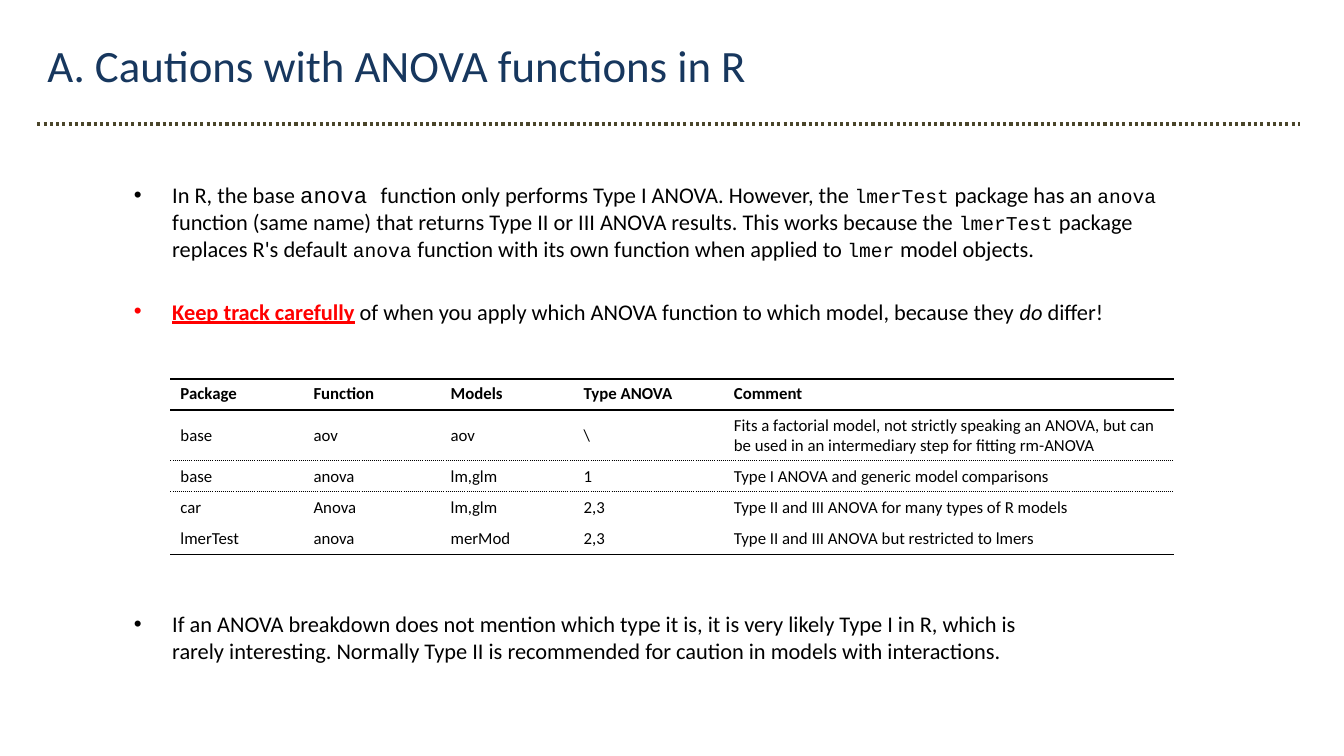
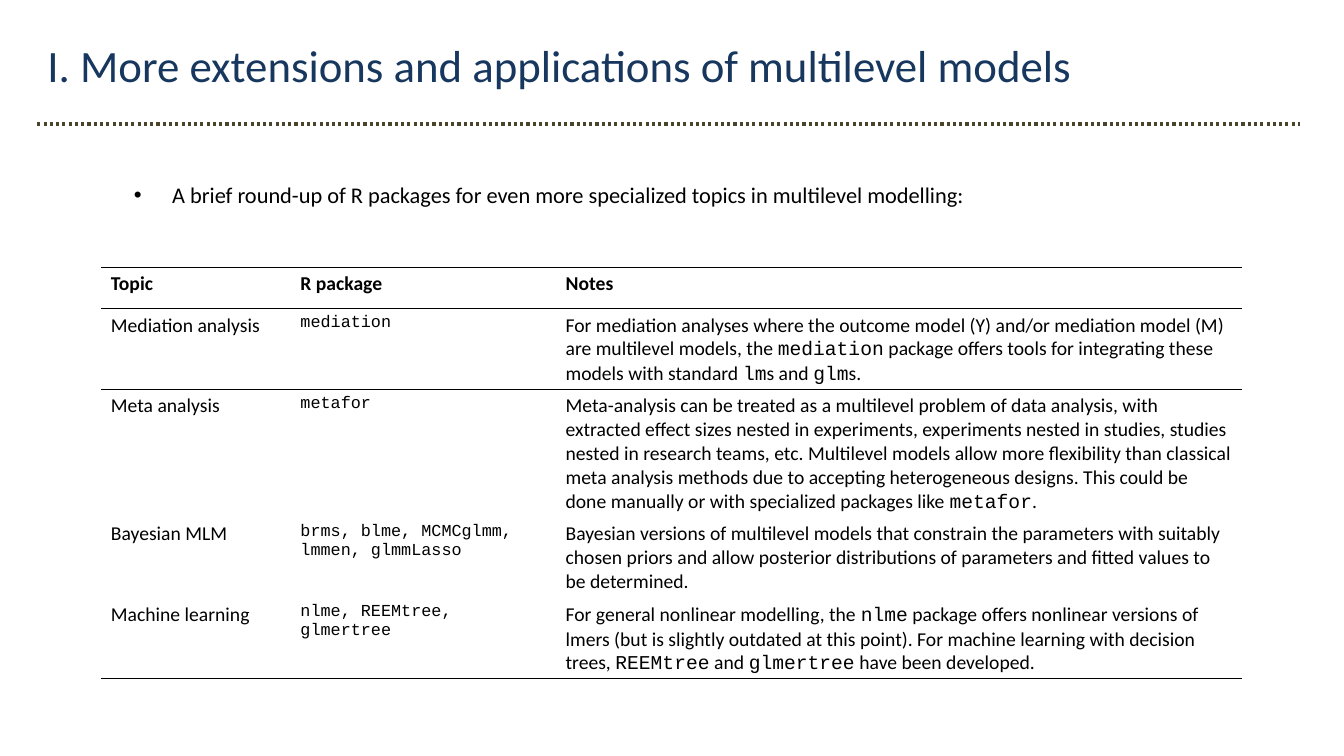
from lxml.etree import SubElement
from pptx import Presentation
from pptx.dml.color import RGBColor
from pptx.enum.dml import MSO_LINE
from pptx.enum.shapes import MSO_CONNECTOR
from pptx.enum.text import MSO_ANCHOR, MSO_AUTO_SIZE, PP_ALIGN
from pptx.oxml.ns import qn
from pptx.util import Inches, Pt

BLACK, NAVY, OLIVE, RED = "000000", "17375E", "4A452A", "FF0000"
SANS, MONO, SERIF = "Calibri", "Courier New", "Times New Roman"
LEFT, TITLE_ONLY = 0.37, 5

GAP = (" ", {"font": SERIF})
CODE = {"font": MONO, "size": 14}
BIG_CODE = {"font": MONO}
WARNING = {"color": RED, "bold": True}


def code(name):
    return [(name, CODE), GAP]


def mixed(text):
    return [(part, BIG_CODE if index % 2 else {})
            for index, part in enumerate(text.split("`"))]


SLIDES = [
    {
        "title": "A. Cautions with ANOVA functions in R",
        "bullets": [
            (0, [
                "In R, the base ", ("anova ", BIG_CODE),
                "function only performs Type I ANOVA. However, the ",
                *code("lmerTest"), "package has an ", *code("anova"),
                "function (same name) that returns Type II or III ANOVA results. "
                "This works because the ",
                *code("lmerTest"), "package replaces R's default ", *code("anova"),
                "function with its own function when applied to ",
                *code("lmer"), "model objects.",
            ]),
            (25.6, [
                ("Keep track carefully", {**WARNING, "underline": True}),
                (" ", WARNING),
                "of when you apply which ANOVA function to which model, because they ",
                ("do ", {"italic": True}), "differ!",
            ]),
            (204, [
                "If an ANOVA breakdown does not mention which type it is, "
                "it is very likely Type I in R, which is \n"
                "rarely interesting. Normally Type II is recommended for caution "
                "in models with interactions.",
            ]),
        ],
        "table": {
            "at": (1.69, 3.76),
            "widths": [1.32, 1.36, 1.32, 1.49, 4.46],
            "heights": [0.31, 0.5, 0.31, 0.31, 0.31],
            "rules": {0: (1, "solid"), 1: (1.5, "solid"), 2: (1, "sysDot"),
                      3: (1, "sysDot"), 5: (1, "solid")},
            "size": 12,
            "anchor": MSO_ANCHOR.MIDDLE,
            "code_columns": [],
            "rows": [
                ("Package", "Function", "Models", "Type ANOVA", "Comment"),
                ("base", "aov", "aov", "\\",
                 "Fits a factorial model, not strictly speaking an ANOVA, but can be "
                 "used in an intermediary step for fitting rm-ANOVA"),
                ("base", "anova", "lm,glm", "1",
                 "Type I ANOVA and generic model comparisons"),
                ("car", "Anova", "lm,glm", "2,3",
                 "Type II and III ANOVA for many types of R models"),
                ("lmerTest", "anova", "merMod", "2,3",
                 "Type II and III ANOVA but restricted to lmers"),
            ],
        },
    },
    {
        "title": "I. More extensions and applications of multilevel models",
        "bullets": [
            (0, ["A brief round-up of R packages for even more specialized topics "
                 "in multilevel modelling:"]),
        ],
        "table": {
            "at": (1, 2.65),
            "widths": [1.88, 2.63, 6.81],
            "heights": [0.41, 0.8, 1.27, 0.8, 0.8],
            "rules": {row: (1, "solid") for row in (0, 1, 2, 5)},
            "size": 14,
            "anchor": MSO_ANCHOR.TOP,
            "code_columns": [1],
            "rows": [
                ("Topic", "R package", "Notes"),
                ("Mediation analysis", "mediation",
                 "For mediation analyses where the outcome model (Y) and/or mediation "
                 "model (M) are multilevel models, the `mediation` package offers tools "
                 "for integrating these models with standard `lm`s and `glm`s."),
                ("Meta analysis", "metafor",
                 "Meta-analysis can be treated as a multilevel problem of data analysis, "
                 "with extracted effect sizes nested in experiments, experiments nested "
                 "in studies, studies nested in research teams, etc. Multilevel models "
                 "allow more flexibility than classical meta analysis methods due to "
                 "accepting heterogeneous designs. This could be done manually or with "
                 "specialized packages like `metafor`."),
                ("Bayesian MLM", "brms, blme, MCMCglmm, lmmen, glmmLasso",
                 "Bayesian versions of multilevel models that constrain the parameters "
                 "with suitably chosen priors and allow posterior distributions of "
                 "parameters and fitted values to be determined."),
                ("Machine learning", "nlme, REEMtree, glmertree",
                 "For general nonlinear modelling, the `nlme` package offers nonlinear "
                 "versions of lmers (but is slightly outdated at this point). For machine "
                 "learning with decision trees, `REEMtree` and `glmertree` have been "
                 "developed."),
            ],
        },
    },
]


def rgb(value):
    return RGBColor.from_string(value)


def add_text(para, text, font=SANS, size=16, color=BLACK, bold=False,
             italic=False, underline=False):
    for index, line in enumerate(text.split("\n")):
        if index:
            para.add_line_break()
        span = para.add_run()
        span.text = line
        span.font.name = font
        span.font.size = Pt(size)
        span.font.color.rgb = rgb(color)
        span.font.bold = bold
        span.font.italic = italic
        span.font.underline = underline


def add_heading(page, text):
    title = page.shapes.title
    title.left, title.top = Inches(LEFT), Inches(0.32)
    title.width, title.height = Inches(11.65), Inches(0.64)
    frame = title.text_frame
    frame.auto_size = MSO_AUTO_SIZE.NONE
    frame.vertical_anchor = MSO_ANCHOR.TOP
    para = frame.paragraphs[0]
    para.alignment = PP_ALIGN.LEFT
    add_text(para, text, size=32, color=NAVY)

    rule = page.shapes.add_connector(MSO_CONNECTOR.STRAIGHT, Inches(LEFT),
                                     Inches(1.23), Inches(12.89), Inches(1.23))
    rule.line.color.rgb = rgb(OLIVE)
    rule.line.width = Pt(2.25)
    rule.line.dash_style = MSO_LINE.ROUND_DOT
    SubElement(rule._element.spPr, qn("a:effectLst"))


def add_bullets(page, bullets):
    box = page.shapes.add_textbox(Inches(1.23), Inches(1.75),
                                  Inches(10.71), Inches(5.39))
    frame = box.text_frame
    frame.word_wrap = True
    for index, (space, spans) in enumerate(bullets):
        para = frame.add_paragraph() if index else frame.paragraphs[0]
        para.space_before = Pt(space)
        props = para._p.get_or_add_pPr()
        props.set("marL", str(Inches(0.38)))
        props.set("indent", str(-Inches(0.38)))
        SubElement(props, qn("a:buFont"), typeface="Arial")
        SubElement(props, qn("a:buChar"), char="•")
        for span in spans:
            text, style = (span, {}) if isinstance(span, str) else span
            add_text(para, text, **style)


def set_border(cell, side, rule):
    props = cell._tc.get_or_add_tcPr()
    line = SubElement(props, qn(f"a:ln{side}"))
    if rule is None:
        line.set("w", "0")
        SubElement(line, qn("a:noFill"))
        return
    width, dash = rule
    line.set("w", str(Pt(width)))
    fill = SubElement(line, qn("a:solidFill"))
    SubElement(fill, qn("a:srgbClr"), val=BLACK)
    SubElement(line, qn("a:prstDash"), val=dash)


def add_grid(page, data):
    rows, widths, heights = data["rows"], data["widths"], data["heights"]
    left, top = data["at"]
    table = page.shapes.add_table(len(rows), len(widths), Inches(left), Inches(top),
                                  Inches(sum(widths)), Inches(sum(heights))).table
    table.first_row = table.horz_banding = False
    for column, width in zip(table.columns, widths):
        column.width = Inches(width)
    for row, height in zip(table.rows, heights):
        row.height = Inches(height)
    for y, texts in enumerate(rows):
        for x, text in enumerate(texts):
            cell = table.cell(y, x)
            cell.vertical_anchor = data["anchor"] if y else MSO_ANCHOR.TOP
            borders = {"L": None, "R": None, "T": data["rules"].get(y),
                       "B": data["rules"].get(y + 1)}
            for side, rule in borders.items():
                set_border(cell, side, rule)
            cell.fill.background()
            para = cell.text_frame.paragraphs[0]
            if y and x in data["code_columns"]:
                add_text(para, text, font=MONO, size=12)
                continue
            for part, style in mixed(text):
                add_text(para, part, size=data["size"], bold=y == 0, **style)


def main():
    deck = Presentation()
    deck.slide_width, deck.slide_height = Inches(13.33), Inches(7.5)
    for content in SLIDES:
        page = deck.slides.add_slide(deck.slide_layouts[TITLE_ONLY])
        add_heading(page, content["title"])
        add_bullets(page, content["bullets"])
        add_grid(page, content["table"])
    deck.save("out.pptx")


if __name__ == "__main__":
    main()
